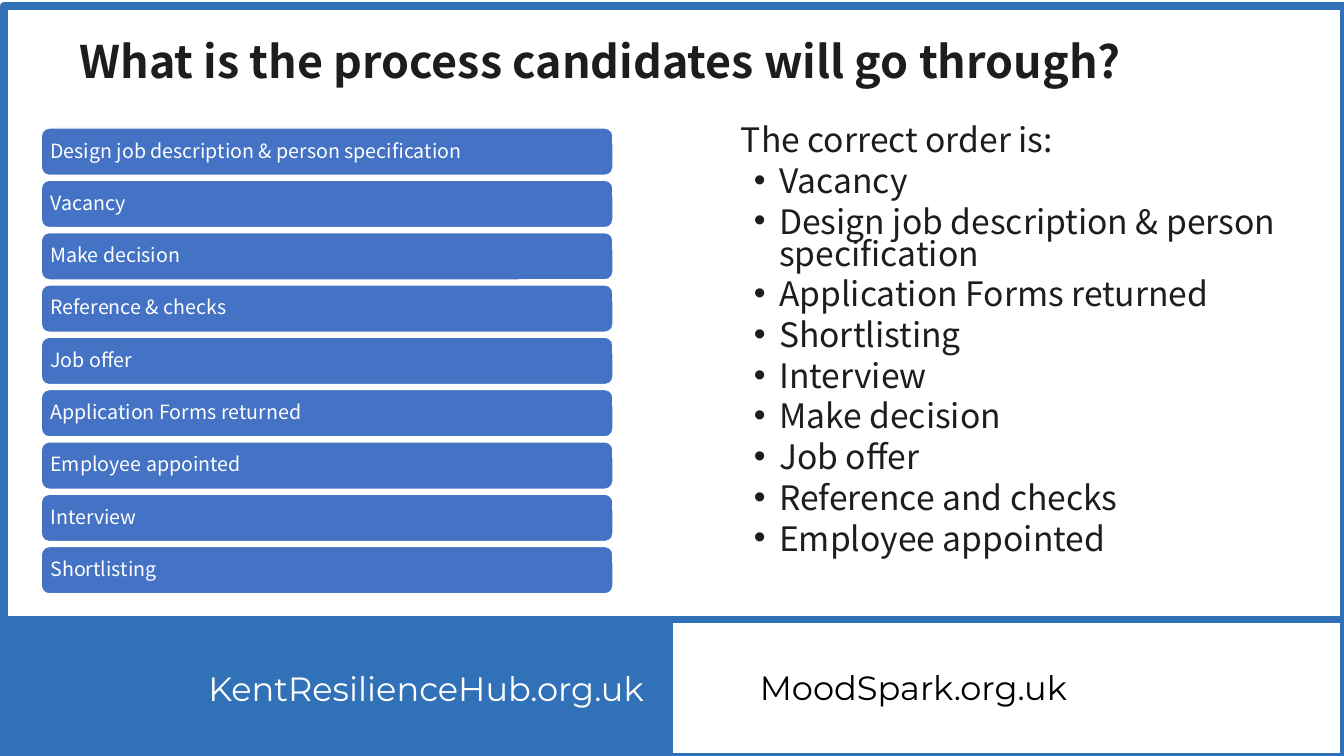
from dataclasses import dataclass, field

from lxml.etree import SubElement
from pptx import Presentation
from pptx.dml.color import RGBColor
from pptx.enum.shapes import MSO_SHAPE as Preset
from pptx.enum.text import MSO_ANCHOR as Anchor, MSO_AUTO_SIZE as AutoSize, PP_ALIGN as Align
from pptx.oxml.ns import qn
from pptx.util import Inches, Pt

COLORS = {"blue": "3171B7", "button": "4472C4", "white": "FFFFFF", "black": "000000", "ink": "1D1D1B"}
BODY_FONT = "Noto Sans CJK KR"
FOOTER_FONT = "Montserrat"

SHUFFLED_STEPS = [
    "Design job description & person specification",
    "Vacancy",
    "Make decision",
    "Reference & checks",
    "Job offer",
    "Application Forms returned",
    "Employee appointed",
    "Interview",
    "Shortlisting",
]
CORRECT_ORDER = [
    "Vacancy",
    "Design job description & person specification",
    "Application Forms returned",
    "Shortlisting",
    "Interview",
    "Make decision",
    "Job offer",
    "Reference and checks",
    "Employee appointed",
]
BUTTON_TOP = 1.27
BUTTON_PITCH = 0.519


@dataclass
class Panel:
    left: float
    top: float
    width: float
    height: float
    line: str
    line_width: float
    fill: str | None = None
    preset: Preset = Preset.RECTANGLE


@dataclass
class Label:
    left: float
    top: float
    width: float
    height: float
    lines: list[str]
    size: float
    color: str
    font: str = BODY_FONT
    bold: bool = False
    bulleted: bool = False
    frame_format: dict = field(default_factory=dict)
    para_format: dict = field(default_factory=dict)


def rgb(name: str) -> RGBColor:
    return RGBColor.from_string(COLORS[name])


def apply(target, values: dict) -> None:
    for name, value in values.items():
        setattr(target, name, value)


def add_panel(page, panel: Panel):
    box = page.shapes.add_shape(
        panel.preset, *map(Inches, (panel.left, panel.top, panel.width, panel.height))
    )
    box.shadow.inherit = False
    if panel.fill:
        box.fill.solid()
        box.fill.fore_color.rgb = rgb(panel.fill)
    else:
        box.fill.background()
    box.line.color.rgb = rgb(panel.line)
    box.line.width = Pt(panel.line_width)
    return box


def add_bullet(para) -> None:
    properties = para._p.get_or_add_pPr()
    properties.set("marL", str(Inches(0.38)))
    properties.set("indent", str(Inches(-0.25)))
    SubElement(properties, qn("a:buFont"), typeface="Arial")
    SubElement(properties, qn("a:buChar"), char="•")


def add_label(page, label: Label) -> None:
    box = page.shapes.add_textbox(
        *map(Inches, (label.left, label.top, label.width, label.height))
    )
    frame = box.text_frame
    apply(frame, {"word_wrap": True, **label.frame_format})
    for index, text in enumerate(label.lines):
        para = frame.add_paragraph() if index else frame.paragraphs[0]
        if label.bulleted and index:
            add_bullet(para)
        apply(para, label.para_format)
        span = para.add_run()
        span.text = text
        apply(span.font, {"name": label.font, "size": Pt(label.size), "bold": label.bold})
        span.font.color.rgb = rgb(label.color)


def main() -> None:
    deck = Presentation()
    apply(deck, {"slide_width": Inches(13.33), "slide_height": Inches(7.5)})
    page = deck.slides.add_slide(deck.slide_layouts[6])

    for panel in (
        Panel(0, 6.15, 13.33, 1.36, "blue", 5),
        Panel(0, 6.15, 6.67, 1.36, "blue", 1, "blue"),
        Panel(0.04, 0.06, 13.29, 8.07, "blue", 6),
    ):
        add_panel(page, panel)

    centered = {"alignment": Align.CENTER}
    labels = [
        Label(1.85, 6.58, 4.75, 0.5, ["KentResilienceHub.org.uk"], 24, "white", FOOTER_FONT,
              para_format=centered),
        Label(6.81, 6.57, 4.5, 0.5, ["MoodSpark.org.uk"], 24, "black", FOOTER_FONT,
              para_format=centered),
        Label(0.69, -0.09, 12.74, 1.45, ["What is the process candidates will go through?"],
              32, "ink", bold=True, frame_format={"vertical_anchor": Anchor.MIDDLE},
              para_format={"line_spacing": 0.9}),
        Label(7.25, 1.21, 5.67, 4.76, ["The correct order is:", *CORRECT_ORDER], 24, "ink",
              bulleted=True, frame_format={"auto_size": AutoSize.TEXT_TO_FIT_SHAPE},
              para_format={"line_spacing": 0.8, "space_after": Pt(6)}),
    ]

    margins = dict.fromkeys(
        ("margin_left", "margin_top", "margin_right", "margin_bottom"), Inches(0.06)
    )
    for index, step in enumerate(SHUFFLED_STEPS):
        top = BUTTON_TOP + index * BUTTON_PITCH
        add_panel(page, Panel(0.41, top, 5.67, 0.47, "white", 1, "button", Preset.ROUNDED_RECTANGLE))
        labels.append(
            Label(0.44, top + 0.02, 5.62, 0.43, [step], 14, "white",
                  frame_format={"vertical_anchor": Anchor.MIDDLE, **margins},
                  para_format={"line_spacing": 0.9, "space_after": Pt(4.9)})
        )

    for label in labels:
        add_label(page, label)
    deck.save("out.pptx")


if __name__ == "__main__":
    main()
